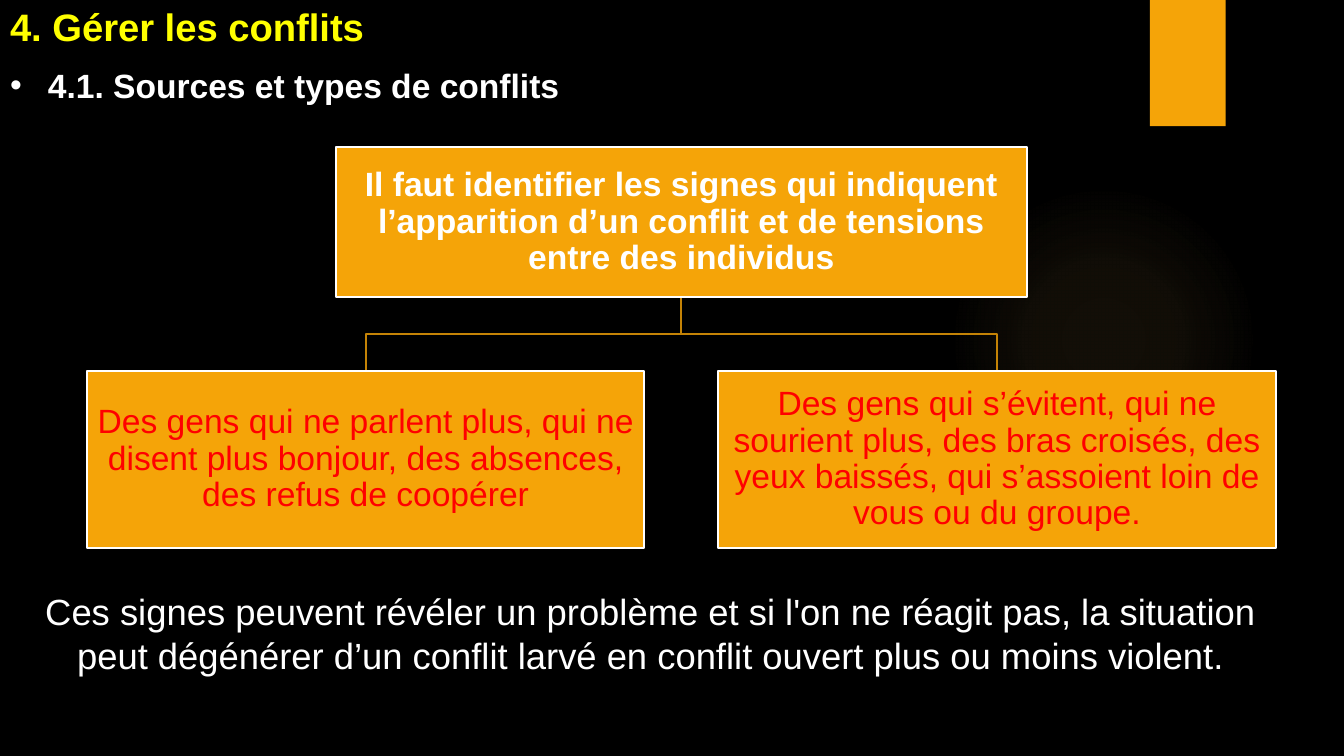
from dataclasses import dataclass

from lxml import etree
from pptx import Presentation
from pptx.dml.color import RGBColor
from pptx.enum.shapes import MSO_SHAPE as Preset
from pptx.enum.text import MSO_ANCHOR as Anchor, MSO_AUTO_SIZE as AutoSize, PP_ALIGN as Align
from pptx.oxml import parse_xml
from pptx.oxml.ns import nsdecls, qn
from pptx.shapes.autoshape import Shape
from pptx.slide import Slide
from pptx.util import Cm, Pt

COLOURS = {
    "background": "000000",
    "accent": "F5A408",
    "branch": "C48306",
    "glow": "FAC96A",
    "text": "FFFFFF",
    "title": "FFFF00",
    "sign": "FF0000",
}
FONT = "Arial"
GLOW_STOPS = [(0, 7), (36, 6), (69, 0)]  # position and opacity, in percent


@dataclass(frozen=True)
class Box:
    left: float
    top: float
    width: float
    height: float

    @property
    def centre(self) -> float:
        return self.left + self.width / 2

    @property
    def bottom(self) -> float:
        return self.top + self.height

    def lengths(self) -> tuple[Cm, Cm, Cm, Cm]:
        return Cm(self.left), Cm(self.top), Cm(self.width), Cm(self.height)


@dataclass(frozen=True)
class Card:
    box: Box
    text: str
    colour: str
    bold: bool = False


ROOT = Card(
    Box(8.46, 3.71, 17.42, 3.78),
    "Il faut identifier les signes qui indiquent l’apparition d’un conflit "
    "et de tensions entre des individus",
    "text",
    bold=True,
)
SIGN_TEXTS = [
    "Des gens qui ne parlent plus, qui ne disent plus bonjour, des absences, "
    "des refus de coopérer",
    "Des gens qui s’évitent, qui ne sourient plus, des bras croisés, des yeux baissés, "
    "qui s’assoient loin de vous ou du groupe.",
]
SIGN_WIDTH, SIGN_GAP = 14.05, 1.86
SIGNS = [
    Card(
        Box(ROOT.box.centre + side * (SIGN_WIDTH + SIGN_GAP) / 2 - SIGN_WIDTH / 2,
            9.35, SIGN_WIDTH, 4.45),
        text,
        "sign",
    )
    for side, text in zip((-1, 1), SIGN_TEXTS)
]


def rgb(name: str) -> RGBColor:
    return RGBColor.from_string(COLOURS[name])


def place(shape: Shape, box: Box) -> None:
    shape.left, shape.top, shape.width, shape.height = box.lengths()


def write(shape: Shape, text: str, size: float, colour: str, bold: bool = False,
          align: Align = Align.CENTER, anchor: Anchor = Anchor.TOP) -> None:
    frame = shape.text_frame
    frame.text = text
    frame.word_wrap = True
    frame.auto_size = AutoSize.NONE
    frame.vertical_anchor = anchor
    paragraph = frame.paragraphs[0]
    paragraph.alignment = align
    paragraph.space_before = Pt(0)
    font = paragraph.runs[0].font
    font.name, font.size, font.bold = FONT, Pt(size), bold
    font.color.rgb = rgb(colour)


def add_filled(slide: Slide, preset: Preset, box: Box) -> Shape:
    shape = slide.shapes.add_shape(preset, *box.lengths())
    shape.shadow.inherit = False
    shape.fill.solid()
    shape.fill.fore_color.rgb = rgb("accent")
    shape.line.fill.background()
    return shape


def add_glow(slide: Slide, box: Box) -> None:
    """Draw a circle that fades out from its centre."""
    shape = add_filled(slide, Preset.OVAL, box)
    gradient = parse_xml(
        f'<a:gradFill {nsdecls("a")} rotWithShape="1"><a:gsLst/><a:path path="circle">'
        '<a:fillToRect l="50000" t="50000" r="50000" b="50000"/></a:path></a:gradFill>'
    )
    for position, opacity in GLOW_STOPS:
        stop = etree.SubElement(gradient[0], qn("a:gs"), pos=str(position * 1000))
        colour = etree.SubElement(stop, qn("a:srgbClr"), val=COLOURS["glow"])
        etree.SubElement(colour, qn("a:alpha"), val=str(opacity * 1000))
    properties = shape.fill._xPr
    properties.replace(properties.find(qn("a:solidFill")), gradient)


def add_branch(slide: Slide, parent: Box, child: Box) -> None:
    middle = (parent.bottom + child.top) / 2
    points = [(parent.centre, middle), (child.centre, middle), (child.centre, child.top)]
    builder = slide.shapes.build_freeform(Cm(parent.centre), Cm(parent.bottom))
    builder.add_line_segments([(Cm(x), Cm(y)) for x, y in points], close=False)
    branch = builder.convert_to_shape()
    branch.shadow.inherit = False
    branch.fill.background()
    branch.line.color.rgb = rgb("branch")
    branch.line.width = Pt(1.5)


def add_card(slide: Slide, card: Card) -> None:
    shape = add_filled(slide, Preset.RECTANGLE, card.box)
    shape.line.color.rgb = rgb("text")
    shape.line.width = Pt(1.5)
    write(shape, card.text, 24, card.colour, card.bold, anchor=Anchor.MIDDLE)
    shape.text_frame.paragraphs[0].line_spacing = 0.9
    frame = shape.text_frame
    frame.margin_left = frame.margin_top = frame.margin_right = frame.margin_bottom = Cm(0.05)


def add_headings(slide: Slide) -> None:
    title, subtitle = slide.placeholders
    place(title, Box(0, 0, 19.15, 1.37))
    write(title, "4. Gérer les conflits", 27.3, "title", True, Align.LEFT, Anchor.BOTTOM)

    place(subtitle, Box(0, 1.5, 31.42, 1.27))
    subtitle.text_frame.text = ""
    properties = subtitle.text_frame.paragraphs[0]._p.get_or_add_pPr()
    properties.set("marL", "0")
    properties.set("indent", "0")
    etree.SubElement(properties, qn("a:buNone"))
    write(subtitle, "4.1. Sources et types de conflits", 24, "text", True, Align.JUSTIFY)


def main() -> None:
    presentation = Presentation()
    presentation.slide_width, presentation.slide_height = Cm(33.87), Cm(19.05)
    slide = presentation.slides.add_slide(presentation.slide_layouts[1])
    slide.background.fill.solid()
    slide.background.fill.fore_color.rgb = rgb("background")

    add_glow(slide, Box(23.9, 4.65, 7.82, 7.82))
    add_filled(slide, Preset.RECTANGLE, Box(28.98, 0, 1.91, 3.18))
    add_headings(slide)
    for sign in SIGNS:
        add_branch(slide, ROOT.box, sign.box)
    for card in [ROOT, *SIGNS]:
        add_card(slide, card)

    conclusion = slide.shapes.add_textbox(*Box(0.86, 14.73, 31.12, 2.49).lengths())
    write(
        conclusion,
        "Ces signes peuvent révéler un problème et si l'on ne réagit pas, la situation "
        "peut dégénérer d’un conflit larvé en conflit ouvert plus ou moins violent.",
        26,
        "text",
    )
    presentation.save("out.pptx")


if __name__ == "__main__":
    main()
